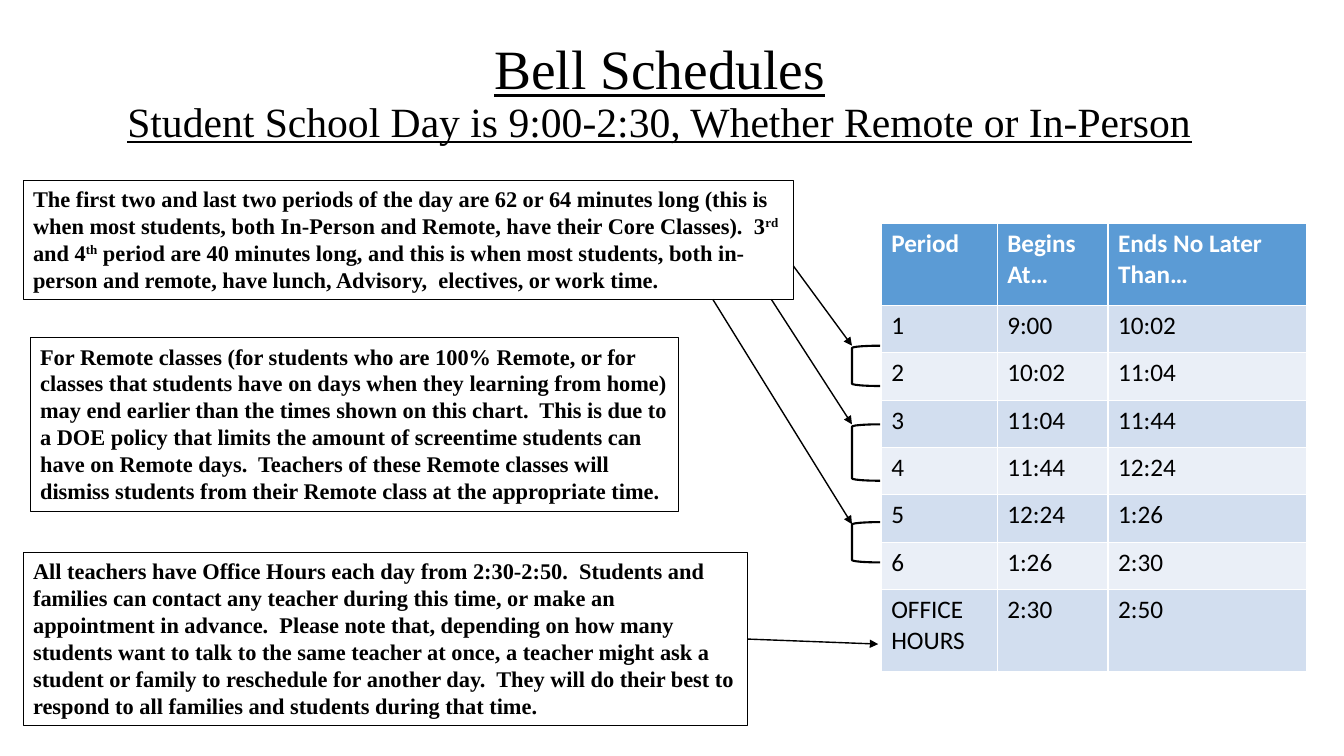
import pptx
import pptx.dml.color
import pptx.enum.shapes
import pptx.enum.text
import pptx.oxml
import pptx.oxml.ns
import pptx.util


def hex_color(value):
    return pptx.dml.color.RGBColor.from_string(value)


def write(paragraph, text, size, font="Times New Roman", color="000000", bold=False, underline=False):
    for index, part in enumerate(text.split("^")):
        run = paragraph.add_run()
        run.text = part
        run.font.size = pptx.util.Pt(size)
        run.font.name = font
        run.font.bold = bold
        run.font.underline = underline
        run.font.color.rgb = hex_color(color)
        if index % 2:
            run.font._element.set("baseline", "30000")


deck = pptx.Presentation()
deck.slide_width = pptx.util.Inches(13.33)
deck.slide_height = pptx.util.Inches(7.5)
column = deck.slide_width // 1333
row = deck.slide_height // 750
slide = deck.slides.add_slide(deck.slide_layouts[5])

heading = slide.shapes.title
heading.left, heading.top = 14 * column, 40 * row
heading.width, heading.height = 1281 * column, 106 * row
heading.text_frame.auto_size = pptx.enum.text.MSO_AUTO_SIZE.NONE
heading.text_frame.vertical_anchor = pptx.enum.text.MSO_ANCHOR.MIDDLE
heading_line = heading.text_frame.paragraphs[0]
heading_line.alignment = pptx.enum.text.PP_ALIGN.CENTER
heading_line.line_spacing = 0.9
write(heading_line, "Bell Schedules", 39.6, underline=True)
heading_line.add_line_break()
write(heading_line, "Student School Day is 9:00-2:30, Whether Remote or In-Person", 29.7, underline=True)

periods = [
    ("Period", "Begins At…", "Ends No Later Than…"),
    ("1", "9:00", "10:02"),
    ("2", "10:02", "11:04"),
    ("3", "11:04", "11:44"),
    ("4", "11:44", "12:24"),
    ("5", "12:24", "1:26"),
    ("6", "1:26", "2:30"),
    ("OFFICE HOURS", "2:30", "2:50"),
]
schedule = slide.shapes.add_table(
    len(periods), 3, 874 * column, 222 * row, 422 * column, 446 * row
).table
for index, width in enumerate((115, 110, 197)):
    schedule.columns[index].width = width * column
for line, entries in enumerate(periods):
    is_header = line == 0
    schedule.rows[line].height = (81 if line in (0, len(periods) - 1) else 47) * row
    for index, entry in enumerate(entries):
        cell = schedule.cell(line, index)
        cell.fill.solid()
        cell.fill.fore_color.rgb = hex_color("5B9BD5" if is_header else ("EAEFF7", "D2DEEF")[line % 2])
        write(cell.text_frame.paragraphs[0], entry, 18, font="Calibri",
              color="FFFFFF" if is_header else "000000", bold=is_header)

notes = [
    (23, 179, 764, 118,
     "The first two and last two periods of the day are 62 or 64 minutes long (this is when most "
     "students, both In-Person and Remote, have their Core Classes).  3^rd^ and 4^th^ period are 40 "
     "minutes long, and this is when most students, both in-person and remote, have lunch, "
     "Advisory,  electives, or work time."),
    (30, 335, 643, 172,
     "For Remote classes (for students who are 100% Remote, or for classes that students have on "
     "days when they learning from home) may end earlier than the times shown on this chart.  This "
     "is due to a DOE policy that limits the amount of screentime students can have on Remote "
     "days.  Teachers of these Remote classes will dismiss students from their Remote class at the "
     "appropriate time."),
    (23, 548, 718, 172,
     "All teachers have Office Hours each day from 2:30-2:50.  Students and families can contact "
     "any teacher during this time, or make an appointment in advance.  Please note that, "
     "depending on how many students want to talk to the same teacher at once, a teacher might ask "
     "a student or family to reschedule for another day.  They will do their best to respond to "
     "all families and students during that time."),
]
brackets = [(845, top, 28, height, "") for top, height in ((343, 40), (421, 56), (518, 40))]

outlined = []
for left, top, width, height, message in notes + brackets:
    preset = pptx.enum.shapes.MSO_SHAPE.RECTANGLE if message else pptx.enum.shapes.MSO_SHAPE.LEFT_BRACKET
    outline = slide.shapes.add_shape(preset, left * column, top * row, width * column, height * row)
    outline.shadow.inherit = False
    outline.fill.background()
    outline.line.color.rgb = hex_color("000000")
    outline.line.width = pptx.util.Pt(0.75 if message else 1.5)
    outlined.append(outline)
    if message:
        outline.text_frame.word_wrap = True
        outline.text_frame.vertical_anchor = pptx.enum.text.MSO_ANCHOR.TOP
        message_line = outline.text_frame.paragraphs[0]
        message_line.alignment = pptx.enum.text.PP_ALIGN.LEFT
        write(message_line, message, 16, bold=True)
office_note = outlined[2]

arrows = [
    (787, 264, 845, 343),
    (765, 297, 845, 421),
    (707, 297, 845, 520),
    (741, 634, 871, 639),
]
for start_x, start_y, end_x, end_y in arrows:
    arrow = slide.shapes.add_connector(
        pptx.enum.shapes.MSO_CONNECTOR.STRAIGHT,
        start_x * column, start_y * row, end_x * column, end_y * row)
    arrow.line.color.rgb = hex_color("000000")
    arrow.line.width = pptx.util.Pt(1)
    tip = pptx.oxml.parse_xml(f'<a:tailEnd {pptx.oxml.ns.nsdecls("a")} type="triangle"/>')
    arrow.line._get_or_add_ln().append(tip)
    arrow._element.spPr.append(pptx.oxml.parse_xml(f'<a:effectLst {pptx.oxml.ns.nsdecls("a")}/>'))
arrow.begin_connect(office_note, 3)

deck.save("out.pptx")
